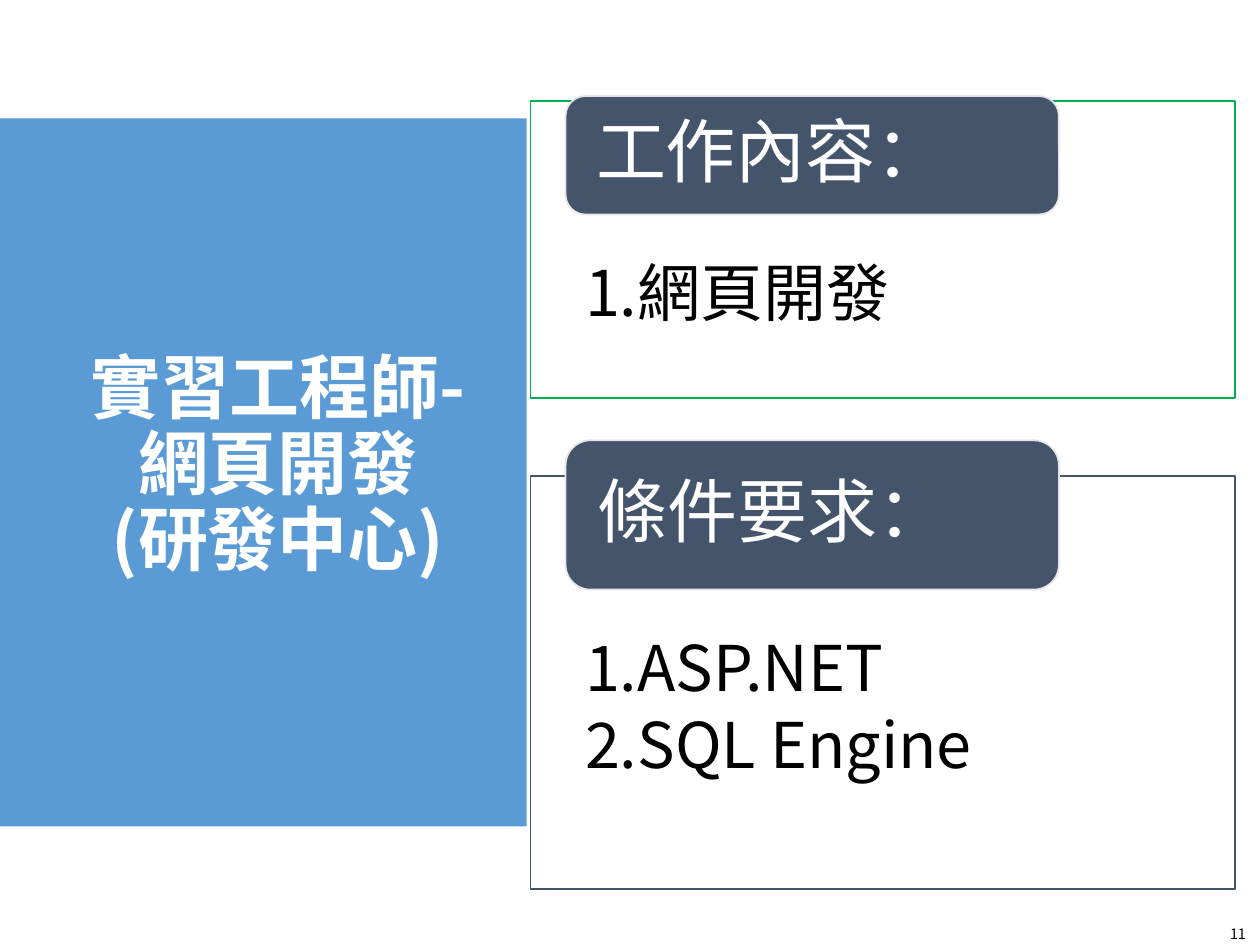
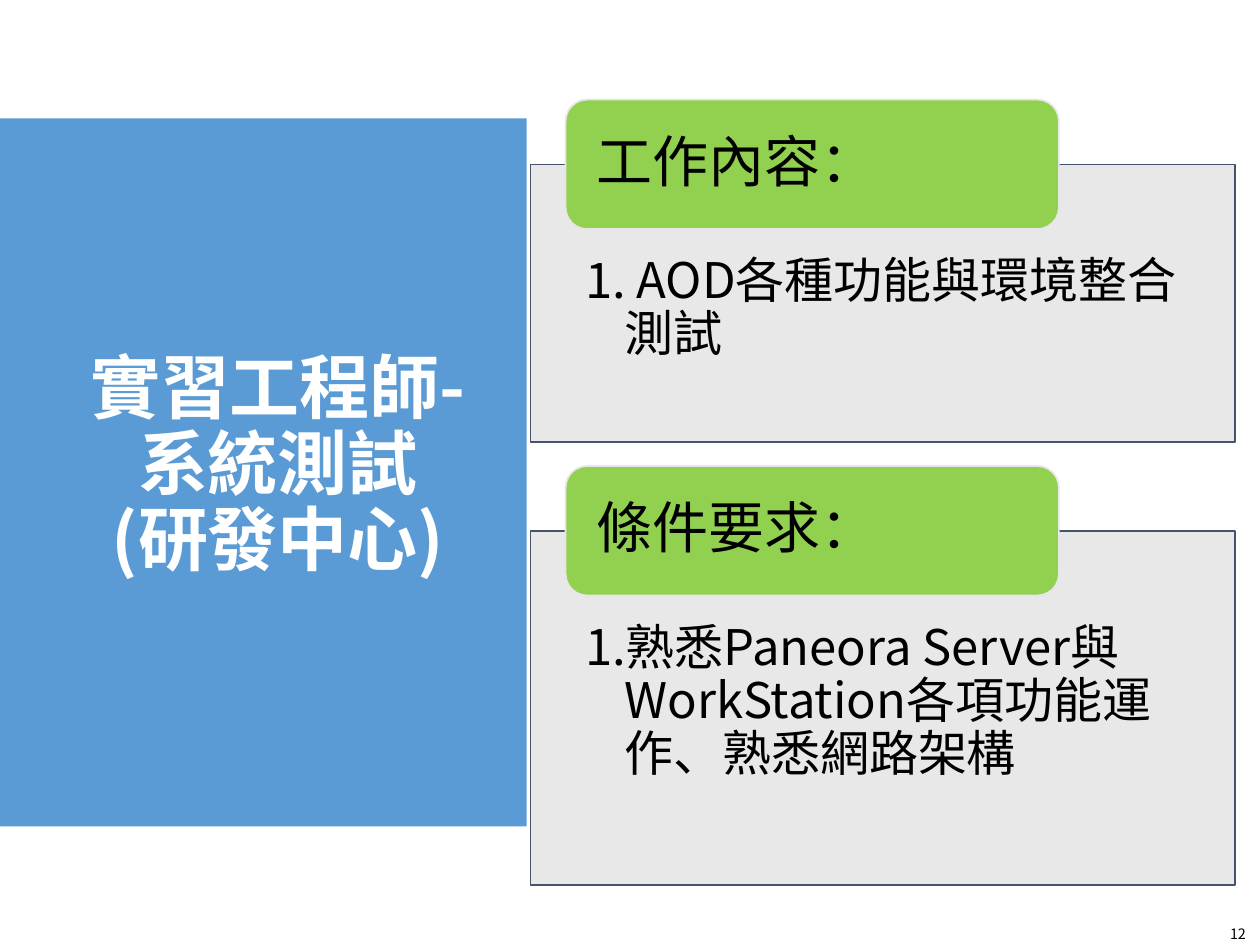
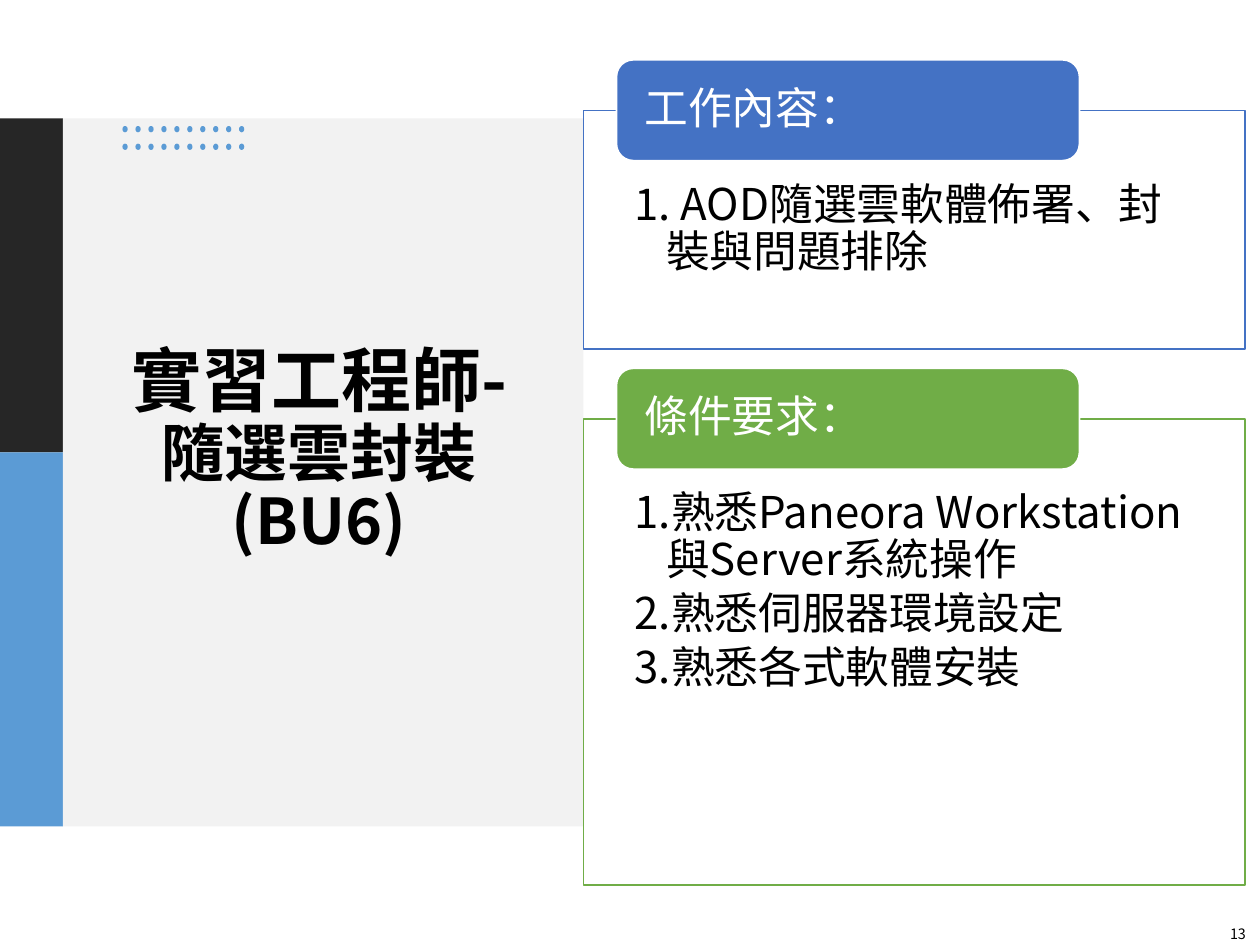
from dataclasses import dataclass

from lxml.etree import SubElement
from pptx import Presentation
from pptx.dml.color import RGBColor
from pptx.enum.shapes import MSO_SHAPE as Shape
from pptx.enum.text import MSO_ANCHOR as Anchor, MSO_AUTO_SIZE as AutoSize, PP_ALIGN as Align
from pptx.oxml.ns import qn
from pptx.util import Pt


@dataclass(frozen=True)
class Theme:
    font: str = "Noto Sans CJK SC"
    black: str = "000000"
    white: str = "FFFFFF"
    charcoal: str = "262626"
    sky: str = "5B9BD5"
    mist: str = "F2F2F2"
    silver: str = "E7E6E6"
    slate: str = "44546A"
    emerald: str = "00B050"
    lime: str = "92D050"
    royal: str = "4472C4"
    leaf: str = "70AD47"
    title: int = 40
    subtitle: int = 36
    number: float = 8.2


@dataclass(frozen=True)
class CardStyle:
    left: float
    width: float
    inset_top: float
    indent: float
    list_size: int
    head_size: int
    head_color: str
    head_line: str
    panel_fill: str | None = None


THEME = Theme()
BAND_TOP, BAND_HEIGHT = 67.7, 404.6
JOB, REQUIREMENT = "工作內容：", "條件要求："


class Deck:
    def __init__(self, theme):
        self.theme = theme
        self.presentation = Presentation()
        self.presentation.slide_width = Pt(720)
        self.presentation.slide_height = Pt(540)
        self.slide = None

    def add_slide(self, number):
        layout = self.presentation.slide_layouts[3]
        self.slide = self.presentation.slides.add_slide(layout)
        box = self.slide.shapes.add_textbox(Pt(662), Pt(525), Pt(50), Pt(17))
        self.frame(box, (0, 0, 0, 0), Anchor.MIDDLE)
        paragraph = box.text_frame.paragraphs[0]
        paragraph.text = str(number)
        paragraph.alignment = Align.RIGHT
        self.font(paragraph, self.theme.number, self.theme.black)

    def place(self, shape, left, top, width, height):
        shape.left, shape.top = Pt(left), Pt(top)
        shape.width, shape.height = Pt(width), Pt(height)

    def paint(self, shape, fill=None, line=None):
        if fill:
            shape.fill.solid()
            shape.fill.fore_color.rgb = RGBColor.from_string(fill)
        else:
            shape.fill.background()
        if line:
            shape.line.color.rgb = RGBColor.from_string(line)
            shape.line.width = Pt(1)
        else:
            shape.line.fill.background()

    def frame(self, shape, insets, anchor):
        frame = shape.text_frame
        frame.word_wrap = True
        frame.auto_size = AutoSize.NONE
        frame.vertical_anchor = anchor
        (frame.margin_left, frame.margin_top,
         frame.margin_right, frame.margin_bottom) = map(Pt, insets)
        return frame

    def font(self, paragraph, size, color, bold=False):
        font = paragraph.font
        font.size = Pt(size)
        font.bold = bold
        font.color.rgb = RGBColor.from_string(color)
        font.name = self.theme.font
        properties = paragraph._p.pPr.find(qn("a:defRPr"))
        SubElement(properties, qn("a:ea"), typeface=self.theme.font)

    def shape(self, kind, bounds, fill, line=None, parent=None):
        shapes = (parent or self.slide).shapes
        shape = shapes.add_shape(kind, *map(Pt, bounds))
        shape.shadow.inherit = False
        self.paint(shape, fill, line)
        return shape

    def band(self, left, top, width, height, fill):
        band = self.shape(Shape.RECTANGLE, (left, top, width, height), fill)
        self.slide.shapes.title.element.addprevious(band.element)

    def title(self, bounds, lines, color, rest_size=None):
        title = self.slide.shapes.title
        self.place(title, *bounds)
        frame = self.frame(title, (5.4, 2.7, 5.4, 2.7), Anchor.MIDDLE)
        paragraph = frame.paragraphs[0]
        paragraph.alignment = Align.CENTER
        paragraph.line_spacing = 0.9
        self.font(paragraph, self.theme.title, color, bold=True)
        for index, line in enumerate(lines):
            if index:
                paragraph.add_line_break()
            run = paragraph.add_run()
            run.text = line
            if index and rest_size:
                run.font.size = Pt(rest_size)

    def card(self, style, index, panel_span, head_span, line, head, items,
             head_fill=None):
        self.panel(style, index, panel_span, line, items)
        self.heading(style, head_span, head, head_fill or line)

    def panel(self, style, index, span, line, items):
        panel = self.slide.placeholders[index]
        self.place(panel, style.left, span[0], style.width, span[1])
        self.paint(panel, style.panel_fill, line)
        if style.panel_fill:
            color = next(panel.element.spPr.iter(qn("a:srgbClr")))
            SubElement(color, qn("a:alpha"), val="90000")
        side = style.width * 0.0775
        frame = self.frame(panel, (side, style.inset_top, side, 14), Anchor.TOP)
        frame.text = "\n".join(items)
        for paragraph in frame.paragraphs:
            paragraph.alignment = Align.LEFT
            paragraph.line_spacing = 0.9
            paragraph.space_before = Pt(0)
            paragraph.space_after = Pt(style.list_size * 0.15)
            properties = paragraph._p.get_or_add_pPr()
            properties.set("marL", str(Pt(style.indent)))
            properties.set("indent", str(-Pt(style.indent)))
            SubElement(properties, qn("a:buNone"))
            self.font(paragraph, style.list_size, self.theme.black)

    def heading(self, style, span, text, fill):
        bounds = (style.left + style.width * 0.05, span[0],
                  style.width * 0.7, span[1])
        heading = self.shape(Shape.ROUNDED_RECTANGLE, bounds, fill, style.head_line)
        inset = style.width * 0.035
        frame = self.frame(heading, (inset, 0, inset, 0), Anchor.MIDDLE)
        paragraph = frame.paragraphs[0]
        paragraph.text = text
        paragraph.alignment = Align.LEFT
        paragraph.line_spacing = 0.9
        self.font(paragraph, style.head_size, style.head_color)

    def dots(self, left, top, columns, rows):
        group = self.slide.shapes.add_group_shape()
        for row in range(rows):
            for column in range(columns):
                bounds = (left + column * 7.4, top + row * 10.1, 3, 3.6)
                self.shape(Shape.OVAL, bounds, self.theme.sky, parent=group)

    def research_slide(self, number, role):
        self.add_slide(number)
        self.band(0, BAND_TOP, 301, BAND_HEIGHT, self.theme.sky)
        self.title((31, 104.4, 255.6, 324.7),
                   ("實習工程師-", role, "(研發中心)"), self.theme.white)


def web_slide(deck, theme):
    deck.research_slide(11, "網頁開發")
    style = CardStyle(303.1, 402.7, 92, 22.5, 36, 40, theme.white, theme.silver)
    deck.card(style, 1, (57.6, 170), (54.9, 67.7), theme.emerald,
              JOB, ["1.網頁開發"], theme.slate)
    deck.card(style, 2, (272, 236), (251.6, 85.3), theme.slate,
              REQUIREMENT, ["1.ASP.NET", "2.SQL Engine"])


def testing_slide(deck, theme):
    deck.research_slide(12, "系統測試")
    style = CardStyle(303.1, 402.7, 52.5, 22.5, 28, 32, theme.black,
                      theme.silver, theme.silver)
    deck.card(style, 1, (94, 158.6), (56.9, 74), theme.slate,
              JOB, ["1. AOD各種功能與環境整合測試"], theme.lime)
    deck.card(style, 2, (303.5, 202.3), (266.3, 74), theme.slate, REQUIREMENT,
              ["1.熟悉Paneora Server與WorkStation各項功能運作、熟悉網路架構"],
              theme.lime)


def cloud_slide(deck, theme):
    deck.add_slide(13)
    deck.band(0, BAND_TOP, 36, 190.8, theme.charcoal)
    deck.band(0, 258.5, 36, 213.8, theme.sky)
    deck.band(36, BAND_TOP, 297.4, BAND_HEIGHT, theme.mist)
    deck.title((54, 138.2, 257, 240.5), ("實習工程師-", "隨選雲封裝", "(BU6)"),
               theme.black, theme.subtitle)
    deck.dots(70, 72, 10, 2)
    style = CardStyle(333.4, 378, 41, 18, 25, 25, theme.white, theme.white,
                      theme.white)
    deck.card(style, 1, (63.2, 136.1), (34.2, 57.6), theme.royal,
              JOB, ["1. AOD隨選雲軟體佈署、封裝與問題排除"])
    deck.card(style, 2, (239.3, 266.4), (210.5, 57.6), theme.leaf, REQUIREMENT,
              ["1.熟悉Paneora Workstation與Server系統操作",
               "2.熟悉伺服器環境設定", "3.熟悉各式軟體安裝"])


def main():
    deck = Deck(THEME)
    for build in (web_slide, testing_slide, cloud_slide):
        build(deck, THEME)
    deck.presentation.save("out.pptx")


if __name__ == "__main__":
    main()
